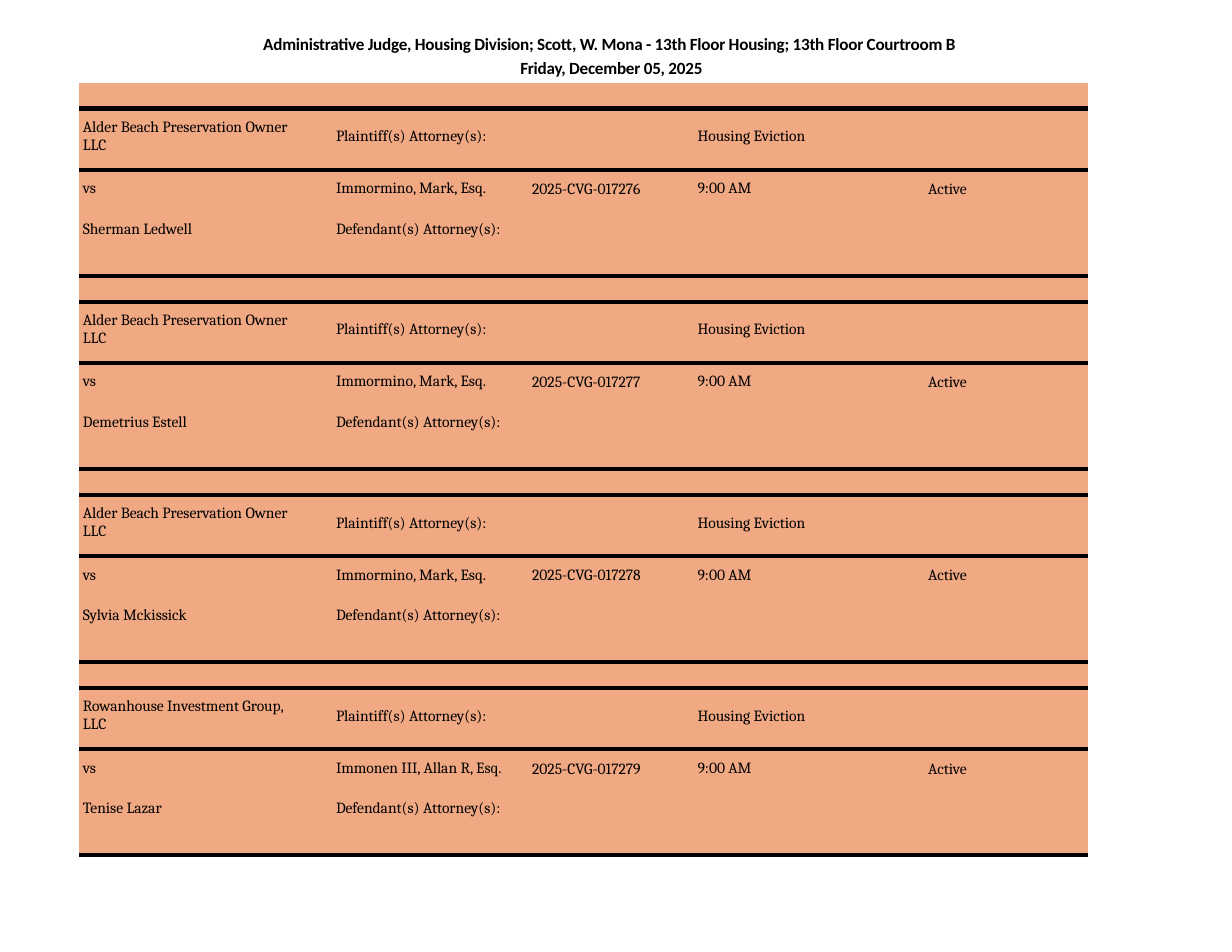
import dataclasses
import lxml.etree
import pptx
import pptx.dml.color
import pptx.oxml
import pptx.oxml.ns
import pptx.util

Cm = pptx.util.Cm
Pt = pptx.util.Pt
qn = pptx.oxml.ns.qn


@dataclasses.dataclass
class Theme:
    ink: str = "000000"
    fill: str = "F0A983"
    head: str = "Calibri"
    body: str = "Cambria"
    big: int = 11
    small: int = 10
    rule: int = 3
    plain: str = "{2D5ABB26-0587-4C30-8999-92F81FD0307C}"


class Page:
    def __init__(self, slide, theme):
        self.slide = slide
        self.theme = theme

    def style(self, para, face, size, bold=False):
        for run in para.runs:
            run.font.name = face
            run.font.size = Pt(size)
            run.font.bold = bold
            run.font.color.rgb = pptx.dml.color.RGBColor.from_string(self.theme.ink)

    def title(self, text, left, top, width, height, indent):
        box = self.slide.shapes.add_textbox(Cm(left), Cm(top), Cm(width), Cm(height))
        frame = box.text_frame
        frame.word_wrap = True
        frame.margin_left = frame.margin_right = frame.margin_bottom = 0
        frame.margin_top = Cm(0.03)
        frame.text = text
        para = frame.paragraphs[0]
        para.line_spacing = 1.16
        props = para._p.get_or_add_pPr()
        props.set("marL", str(Cm(indent)))
        props.set("indent", str(-Cm(indent)))
        self.style(para, self.theme.head, self.theme.big, True)
        for run in para.runs:
            run.font._element.set("spc", "-17")

    def table(self, left, top, cols, rows):
        frame = self.slide.shapes.add_table(
            len(rows), len(cols), Cm(left), Cm(top), Cm(sum(cols)), Cm(sum(rows))
        )
        grid = frame.table
        grid.first_row = grid.horz_banding = False
        grid._tbl.tblPr.find(qn("a:tableStyleId")).text = self.theme.plain
        for col, width in zip(grid.columns, cols):
            col.width = Cm(width)
        for row, height in zip(grid.rows, rows):
            row.height = Cm(height)
        return grid

    def cell(self, cell, text, left, top, right, ruled):
        cell.margin_left, cell.margin_top = Cm(left), Cm(top)
        cell.margin_right, cell.margin_bottom = Cm(right), 0
        cell.fill.solid()
        cell.fill.fore_color.rgb = pptx.dml.color.RGBColor.from_string(self.theme.fill)
        para = cell.text_frame.paragraphs[0]
        if text:
            para.text = text
            self.style(para, self.theme.body, self.theme.small)
        else:
            end = lxml.etree.SubElement(para._p, qn("a:endParaRPr"))
            end.set("sz", str(self.theme.small * 100))
        if ruled:
            self.rule(cell)

    def rule(self, cell):
        line = pptx.oxml.parse_xml(
            f'<a:lnB {pptx.oxml.ns.nsdecls("a")} w="{Pt(self.theme.rule)}">'
            f'<a:solidFill><a:srgbClr val="{self.theme.ink}"/></a:solidFill></a:lnB>'
        )
        cell._tc.get_or_add_tcPr().insert(0, line)


OWNER = "Alder Beach Preservation Owner LLC"
MARK = "Immormino, Mark, Esq."
CASES = [
    (OWNER, "Sherman Ledwell", MARK, "2025-CVG-017276"),
    (OWNER, "Demetrius Estell", MARK, "2025-CVG-017277"),
    (OWNER, "Sylvia Mckissick", MARK, "2025-CVG-017278"),
    ("Rowanhouse Investment Group, LLC", "Tenise Lazar",
     "Immonen III, Allan R, Esq.", "2025-CVG-017279"),
]
COLS = [5.54, 4.6, 3.45, 4.39, 4.9]
ROWS = [0.58, 1.39, 0.94, 1.47]
LEFTS = [0.08, 0.28, 0.13, 0.43, 1.27]
TOPS = [
    [0, 0, 0, 0, 0],
    [0.23, 0.44, 0, 0.44, 0],
    [0.23, 0.23, 0.25, 0.23, 0.25],
    [0.2, 0.2, 0, 0, 0],
]
RULED = [True, True, False, True]


def lines(owner, tenant, lawyer, number):
    return [
        ["", "", "", "", ""],
        [owner, "Plaintiff(s) Attorney(s):", "", "Housing Eviction", ""],
        ["vs", lawyer, number, "9:00 AM", "Active"],
        [tenant, "Defendant(s) Attorney(s):", "", "", ""],
    ]


def main():
    deck = pptx.Presentation()
    deck.slide_width, deck.slide_height = Cm(27.94), Cm(21.59)
    page = Page(deck.slides.add_slide(deck.slide_layouts[6]), Theme())
    page.title(
        "Administrative Judge, Housing Division; Scott, W. Mona - 13th Floor Housing; "
        "13th Floor Courtroom B Friday, December 05, 2025",
        5.97, 0.66, 16.13, 1.14, 5.83,
    )
    grid = page.table(1.8, 1.88, COLS, ROWS * len(CASES))
    for num, case in enumerate(CASES):
        for step, texts in enumerate(lines(*case)):
            row = num * len(ROWS) + step
            for col, text in enumerate(texts):
                right = 0 if col else 0.7
                page.cell(grid.cell(row, col), text, LEFTS[col],
                          TOPS[step][col], right, RULED[step])
            if step == 0:
                grid.cell(row, 0).merge(grid.cell(row, len(COLS) - 1))
    deck.save("out.pptx")


if __name__ == "__main__":
    main()
